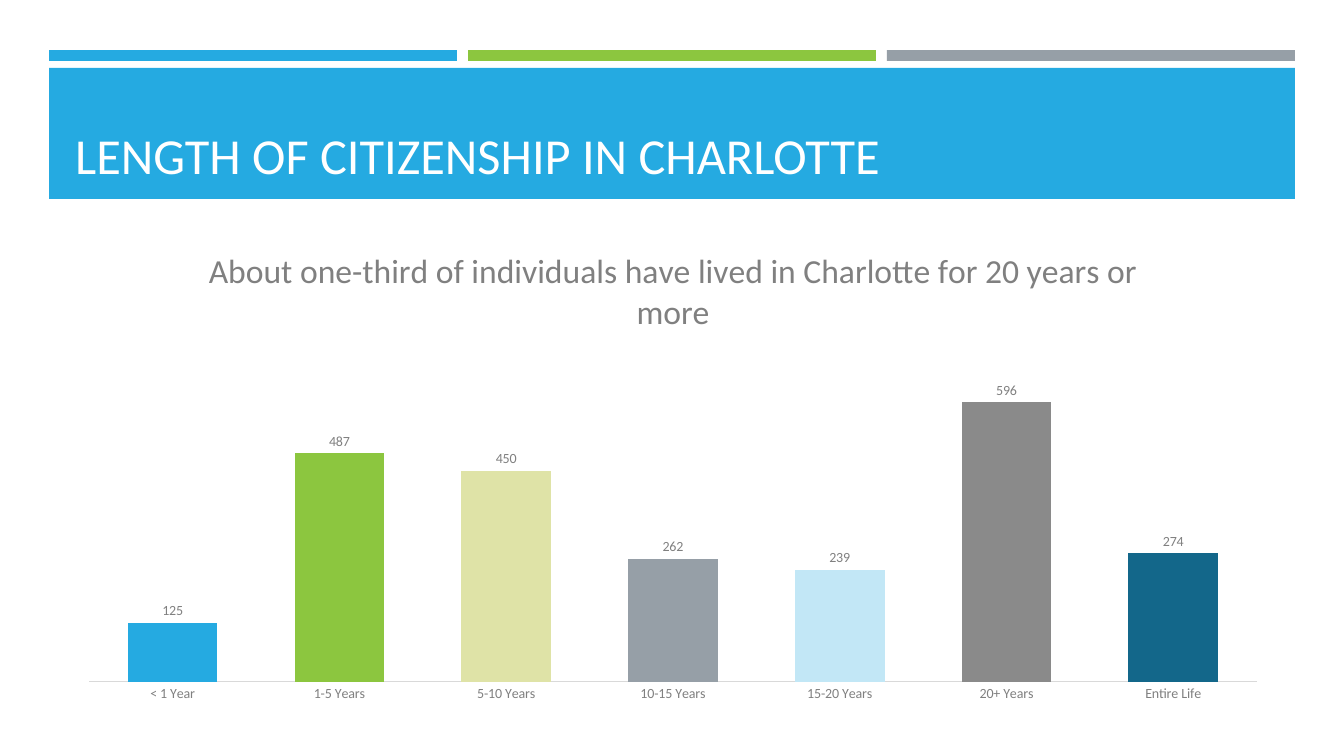
from pptx import Presentation
from pptx import util as u
from pptx.chart.data import CategoryChartData
from pptx.dml.color import RGBColor
from pptx.enum import chart as ch, shapes, text

SCALE = 914400 / 100.8  # EMU per px
FONT = "Calibri"
WHITE = RGBColor(0xFF, 0xFF, 0xFF)
BLUE = RGBColor(0x25, 0xAA, 0xE1)
GREEN = RGBColor(0x8C, 0xC6, 0x3F)
STEEL = RGBColor(0x96, 0x9F, 0xA7)
SAND = RGBColor(0xDF, 0xE3, 0xA7)
PALE_BLUE = RGBColor(0xC2, 0xE7, 0xF6)
MID_GRAY = RGBColor(0x8A, 0x8A, 0x8A)
DARK_BLUE = RGBColor(0x13, 0x67, 0x8A)
TEXT_GRAY = RGBColor(0x80, 0x80, 0x80)
AXIS_GRAY = RGBColor(0xD9, 0xD9, 0xD9)

HEADING = "LENGTH OF CITIZENSHIP IN CHARLOTTE"
FINDING = "About one-third of individuals have lived in Charlotte for 20 years or more"
RESIDENTS = [
    ("< 1 Year", 125, BLUE),
    ("1-5 Years", 487, GREEN),
    ("5-10 Years", 450, SAND),
    ("10-15 Years", 262, STEEL),
    ("15-20 Years", 239, PALE_BLUE),
    ("20+ Years", 596, MID_GRAY),
    ("Entire Life", 274, DARK_BLUE),
]


def px(*lengths):
    return [u.Emu(round(length * SCALE)) for length in lengths]


def set_all(target, values):
    for name, value in values.items():
        setattr(target, name, value)


def set_font(font, size, color):
    set_all(font, {"name": FONT, "size": u.Pt(size), "bold": False})
    font.color.rgb = color


def add_band(slide, box, color):
    band = slide.shapes.add_shape(shapes.MSO_SHAPE.RECTANGLE, *px(*box))
    band.shadow.inherit = False
    band.fill.solid()
    band.fill.fore_color.rgb = color
    band.line.fill.background()


def place_heading(slide, box):
    heading = slide.shapes.title
    slide.shapes.element.append(heading.element)  # in front of the banner
    set_all(heading, dict(zip(("left", "top", "width", "height"), px(*box))))
    frame = heading.text_frame
    frame.text = HEADING
    set_all(frame, {"word_wrap": True, "auto_size": text.MSO_AUTO_SIZE.NONE,
                    "vertical_anchor": text.MSO_ANCHOR.BOTTOM})
    line = frame.paragraphs[0]
    line.alignment = text.PP_ALIGN.LEFT
    set_font(line.runs[0].font, 36, WHITE)


def style_axes(chart):
    years = chart.category_axis
    set_all(years, {"major_tick_mark": ch.XL_TICK_MARK.NONE,
                    "minor_tick_mark": ch.XL_TICK_MARK.NONE,
                    "has_major_gridlines": False})
    years.format.line.color.rgb = AXIS_GRAY
    years.format.line.width = u.Pt(0.75)
    set_all(chart.value_axis, {"visible": False, "has_major_gridlines": False,
                               "minimum_scale": 0, "maximum_scale": 700})


def add_residents_chart(slide, box):
    names, counts, colors = zip(*RESIDENTS)
    data = CategoryChartData()
    data.categories = names
    data.add_series("Series 1", counts)
    chart = slide.shapes.add_chart(
        ch.XL_CHART_TYPE.COLUMN_CLUSTERED, *px(*box), data).chart
    chart.has_legend = False
    set_font(chart.font, 10, TEXT_GRAY)

    chart.has_title = True
    chart.chart_title.include_in_layout = False
    finding = chart.chart_title.text_frame
    finding.text = FINDING
    set_font(finding.paragraphs[0].runs[0].font, 24, TEXT_GRAY)
    style_axes(chart)

    plot = chart.plots[0]
    set_all(plot, {"gap_width": 86, "overlap": -27,
                   "vary_by_categories": False, "has_data_labels": True})
    set_all(plot.data_labels, {"show_value": True,
                               "position": ch.XL_LABEL_POSITION.OUTSIDE_END})
    set_font(plot.data_labels.font, 10, TEXT_GRAY)
    for index, color in enumerate(colors):
        fill = plot.series[0].points[index].format.fill
        fill.solid()
        fill.fore_color.rgb = color


def main():
    deck = Presentation()
    deck.slide_width, deck.slide_height = px(1344, 756)
    slide = deck.slides.add_slide(deck.slide_layouts[5])
    for column, color in enumerate((BLUE, GREEN, STEEL)):
        add_band(slide, (49 + 419 * column, 50, 408, 11), color)
    add_band(slide, (49, 68, 1246, 131), BLUE)
    place_heading(slide, (65, 78, 1216, 112))
    add_residents_chart(slide, (65, 227, 1216, 484))
    deck.save("out.pptx")


if __name__ == "__main__":
    main()
